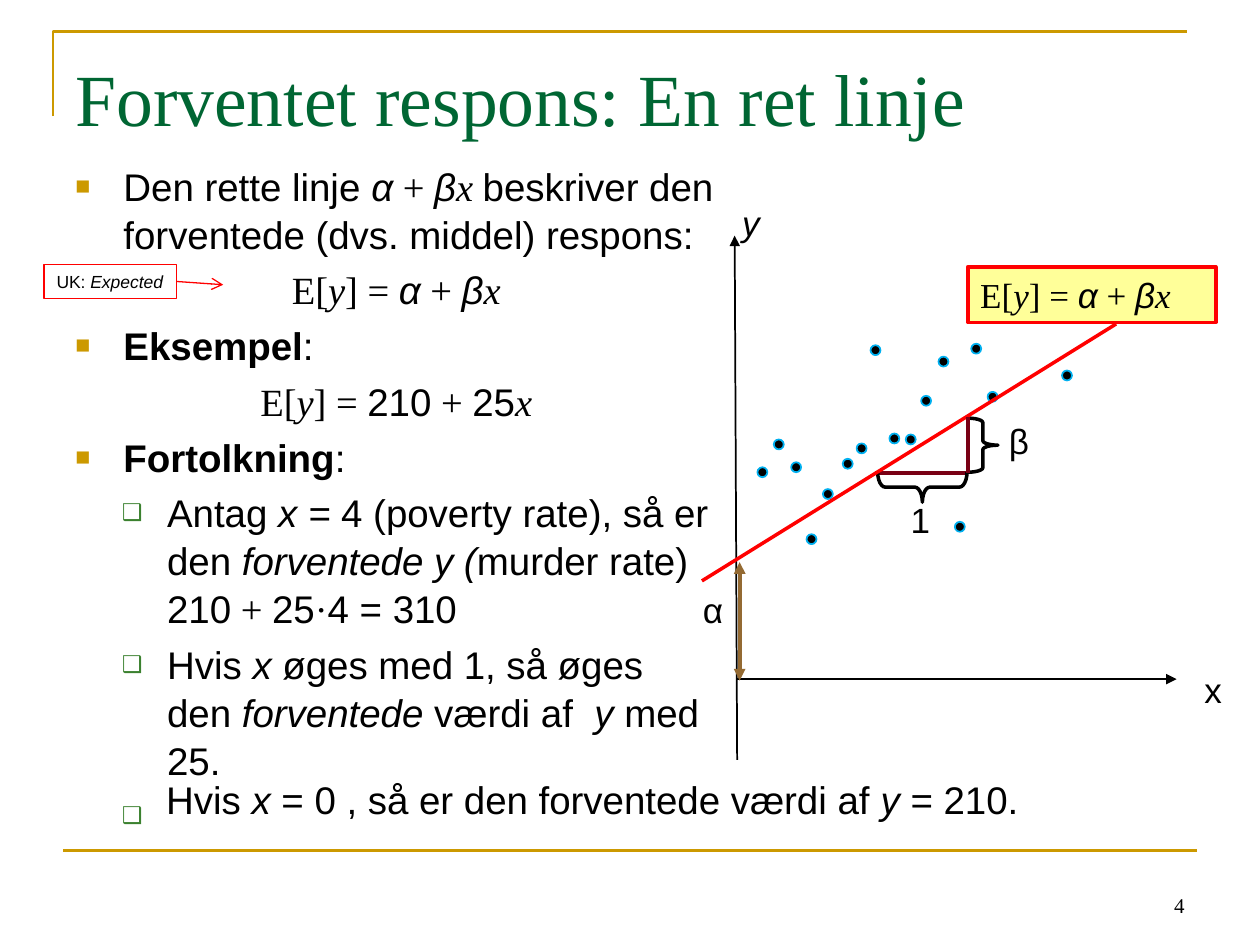
from lxml.etree import SubElement
from pptx import Presentation
from pptx.dml.color import RGBColor
from pptx.enum.shapes import MSO_CONNECTOR, MSO_SHAPE
from pptx.enum.text import MSO_ANCHOR, MSO_AUTO_SIZE, PP_ALIGN
from pptx.oxml.ns import qn
from pptx.util import Cm, Pt

COLORS = {
    "gold": "CC9900", "title": "006633", "green": "3B812F", "black": "000000",
    "dot": "00B0F0", "step": "790015", "red": "FF0000", "yellow": "FFFF99",
    "brown": "946A32",
}
STYLES = {
    "a": {"name": "Arial"},
    "ai": {"name": "Arial", "italic": True},
    "ab": {"name": "Arial", "bold": True},
    "t": {"name": "Times New Roman"},
    "ti": {"name": "Times New Roman", "italic": True},
}
GROW = {"auto_size": MSO_AUTO_SIZE.SHAPE_TO_FIT_TEXT}
BULLETS = {
    "square": ("■", "gold", 65, 0.97, -0.97),
    "box": ("❑", "green", 60, 1.85, -0.91),
    "none": (None, None, None, 0.97, -0.97),
}
MEAN = [("E[", "t"), ("y", "ti"), ("] = ", "t")]
LINE = [("α", "ai"), (" + ", "t"), ("β", "ai"), ("x", "ti")]
BODY = [
    ("square", [("Den rette linje ", "a"), *LINE, (" ", "ti"),
                ("beskriver den forventede (dvs. middel) respons:", "a")]),
    ("none", MEAN + LINE),
    ("square", [("Eksempel", "ab"), (":", "a")]),
    ("none", MEAN + [("210", "a"), (" + ", "t"), ("25", "a"), ("x", "ti")]),
    ("square", [("Fortolkning", "ab"), (":", "a")]),
    ("box", [("Antag ", "a"), ("x = ", "ai"), ("4 (poverty rate), så er den ", "a"),
             ("forventede y (", "ai"), ("murder rate) 210", "a"), (" + ", "t"),
             ("25", "a"), ("·", "t"), ("4 = 310", "a")]),
    ("box", [("Hvis ", "a"), ("x", "ai"), (" øges med 1, så øges den ", "a"),
             ("forventede", "ai"), (" værdi af ", "a"), (" y ", "ai"), ("med 25.", "a")]),
    ("box", [(" ", "a")]),
]
DOTS = [
    (21.41, 7.47), (17.55, 6.96), (16.99, 9.25), (19.91, 7.9), (19.58, 6.93),
    (19.25, 10.52), (18.92, 7.19), (18.57, 7.98), (18.26, 8.76), (17.93, 8.74),
    (17.27, 8.94), (16.59, 9.86), (16.26, 10.77), (15.95, 9.32), (15.6, 8.86),
    (15.27, 9.42),
]


def rgb(name):
    return RGBColor.from_string(COLORS[name])


def apply(obj, values):
    for key, value in values.items():
        setattr(obj, key, value)


def place(sp, box):
    apply(sp, dict(zip(("left", "top", "width", "height"), map(Cm, box))))


def add_runs(p, runs, size, color="black"):
    for text, style in runs:
        r = p.add_run()
        r.text = text
        apply(r.font, {"size": Pt(size), **STYLES[style]})
        r.font.color.rgb = rgb(color)


def set_line(sp, color, width):
    sp.line.color.rgb = rgb(color)
    sp.line.width = Pt(width)


def add_text(s, box, runs, size, align=PP_ALIGN.LEFT, **frame):
    tb = s.shapes.add_textbox(*map(Cm, box))
    apply(tb.text_frame, {"word_wrap": True, **frame})
    p = tb.text_frame.paragraphs[0]
    p.alignment = align
    add_runs(p, runs, size)


def add_shape(s, kind, box, color, width, fill=None):
    sp = s.shapes.add_shape(kind, *map(Cm, box))
    sp.shadow.inherit = False
    if fill:
        sp.fill.solid()
        sp.fill.fore_color.rgb = rgb(fill)
    else:
        sp.fill.background()
    set_line(sp, color, width)
    return sp


def add_label(s, box, runs, size, width, fill=None, wrap=True):
    sp = add_shape(s, MSO_SHAPE.RECTANGLE, box, "red", width, fill)
    apply(sp.text_frame, {"word_wrap": wrap, **GROW})
    p = sp.text_frame.paragraphs[0]
    p.alignment = PP_ALIGN.LEFT
    add_runs(p, runs, size)
    return sp


def add_brace(s, box, adj, rotation=0):
    sp = add_shape(s, MSO_SHAPE.LEFT_BRACE, box, "black", 2)
    sp.adjustments[0] = adj
    sp.rotation = rotation
    sp.element.spPr.xfrm.set("flipH", "1")


def add_line(s, ends, color, width, head=None, tail=None):
    c = s.shapes.add_connector(MSO_CONNECTOR.STRAIGHT, *map(Cm, ends))
    set_line(c, color, width)
    ln = c.line._get_or_add_ln()
    for tag, kind in (("a:headEnd", head), ("a:tailEnd", tail)):
        if kind:
            SubElement(ln, qn(tag), type=kind)
    SubElement(c.element.spPr, qn("a:effectLst"))
    return c


def add_corner(s):
    fb = s.shapes.build_freeform(Cm(1.07), Cm(2.34))
    fb.add_line_segments([(Cm(1.07), Cm(0.64)), (Cm(23.93), Cm(0.64))], close=False)
    sp = fb.convert_to_shape()
    sp.shadow.inherit = False
    sp.fill.background()
    set_line(sp, "gold", 1.5)


def set_bullet(p, kind):
    char, color, size, margin, indent = BULLETS[kind]
    pPr = p._p.get_or_add_pPr()
    pPr.set("marL", str(Cm(margin)))
    pPr.set("indent", str(Cm(indent)))
    if not char:
        SubElement(pPr, qn("a:buNone"))
        return
    SubElement(SubElement(pPr, qn("a:buClr")), qn("a:srgbClr"), val=COLORS[color])
    SubElement(pPr, qn("a:buSzPct"), val=str(size * 1000))
    SubElement(pPr, qn("a:buFont"), typeface="Arial")
    SubElement(pPr, qn("a:buChar"), char=char)


def add_title(s):
    title = s.shapes.title
    place(title, (1.27, 0.76, 22.86, 3.18))
    tf = title.text_frame
    apply(tf, {"vertical_anchor": MSO_ANCHOR.TOP, "margin_top": Cm(0.31),
               "auto_size": MSO_AUTO_SIZE.NONE})
    p = tf.paragraphs[0]
    p.alignment = PP_ALIGN.LEFT
    add_runs(p, [("Forventet respons: En ret linje", "t")], 42, "title")


def add_body(s):
    tf = s.shapes.add_textbox(*map(Cm, (1.27, 3.12, 13.44, 14.81))).text_frame
    tf.word_wrap = True
    for i, (kind, runs) in enumerate(BODY):
        p = tf.add_paragraph() if i else tf.paragraphs[0]
        apply(p, {
            "alignment": PP_ALIGN.CENTER if kind == "none" else PP_ALIGN.LEFT,
            "level": 1 if kind == "box" else 0,
            "space_before": Pt(4.4),
            "line_spacing": 1.04,
        })
        set_bullet(p, kind)
        add_runs(p, runs, 22)


def add_plot(s):
    add_text(s, (24.03, 13.36, 0.86, 1.09), [("x", "a")], 20, **GROW, word_wrap=False)
    add_line(s, (14.86, 13.69, 23.72, 13.69), "black", 1, tail="triangle")
    add_text(s, (14.71, 3.94, 0.86, 1.09), [("y", "ai")], 20, **GROW, word_wrap=False)
    add_line(s, (14.86, 15.32, 14.81, 4.75), "black", 1, tail="triangle")
    for x, y in DOTS:
        add_shape(s, MSO_SHAPE.OVAL, (x, y, 0.2, 0.2), "dot", 1, "black")
    add_line(s, (17.63, 9.53, 19.51, 9.53), "step", 2)
    add_label(s, (19.51, 5.38, 5, 1.12), MEAN + LINE, 20, 2, "yellow")
    add_brace(s, (19.51, 8.43, 0.61, 1.09), 0.15)
    add_brace(s, (18.29, 8.92, 0.61, 1.8), 0.25, 90)
    add_line(s, (14.15, 11.71, 22.5, 6.53), "red", 2)
    add_line(s, (19.51, 8.41, 19.51, 9.53), "step", 2)
    add_line(s, (14.91, 13.72, 14.91, 11.33), "brown", 2.25, "triangle", "triangle")
    for text, x, y in (("β", 20.09, 8.33), ("α", 13.92, 11.73), ("1", 18.11, 9.93)):
        add_text(s, (x, y, 1.17, 1.12), [(text, "a")], 20, **GROW)


def main():
    prs = Presentation()
    apply(prs, {"slide_width": Cm(25.4), "slide_height": Cm(19.05)})
    s = prs.slides.add_slide(prs.slide_layouts[5])
    add_corner(s)
    add_line(s, (1.27, 17.15, 24.13, 17.15), "gold", 1.5)
    add_title(s)
    add_body(s)
    add_plot(s)
    add_text(s, (3.1, 15.52, 18.14, 1.19),
             [("Hvis ", "a"), ("x ", "ai"), ("= 0 , så er den forventede værdi af ", "a"),
              ("y", "ai"), (" = 210.", "a")], 22, **GROW, word_wrap=False)
    note = add_label(s, (0.89, 5.33, 2.67, 0.69), [("UK: ", "a"), ("Expected", "ai")],
                     10, 0.75, wrap=False)
    arrow = add_line(s, (3.56, 5.66, 4.5, 5.74), "red", 0.75, tail="arrow")
    arrow.begin_connect(note, 3)
    add_text(s, (18.21, 17.35, 5.92, 1.27), [("4", "t")], 12, PP_ALIGN.RIGHT,
             vertical_anchor=MSO_ANCHOR.BOTTOM)
    prs.save("out.pptx")


if __name__ == "__main__":
    main()
